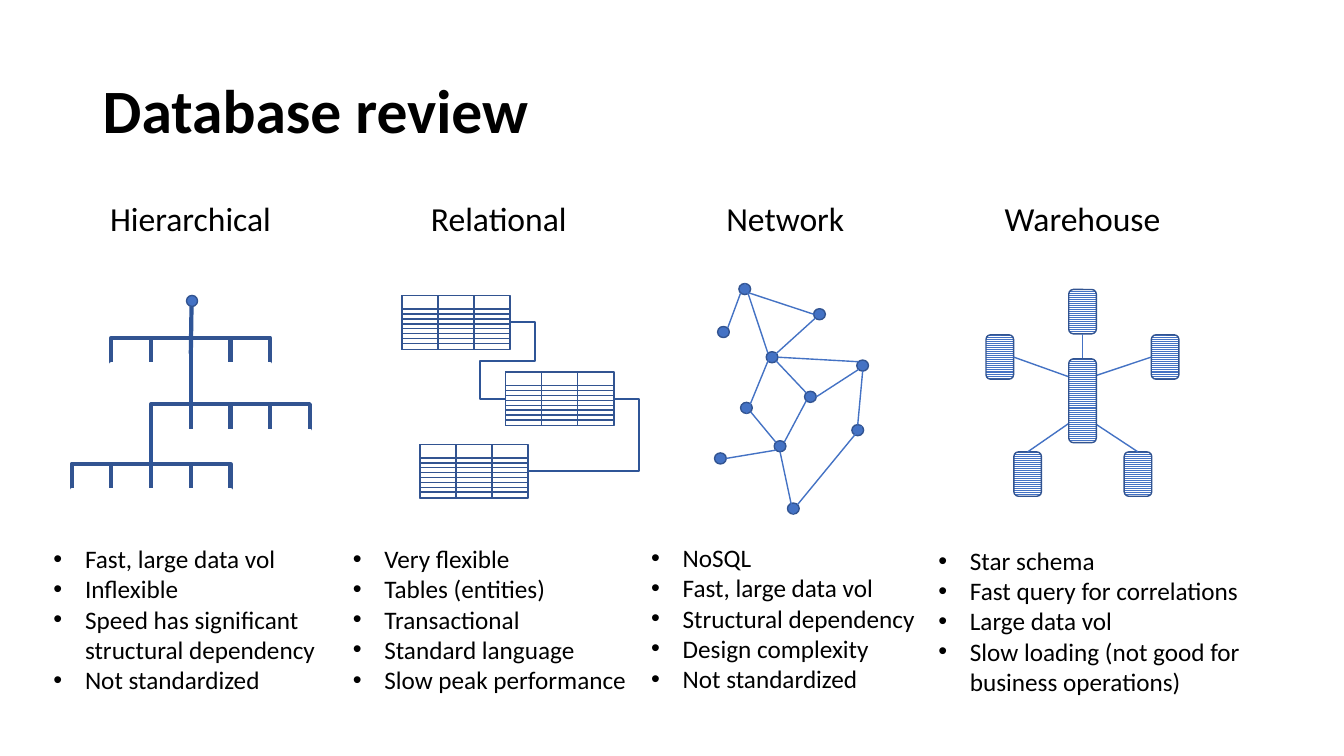
"""Build a slide that reviews four kinds of database."""
from dataclasses import dataclass

from lxml.etree import SubElement
from pptx import Presentation
from pptx.dml.color import RGBColor
from pptx.enum.dml import MSO_PATTERN
from pptx.enum.shapes import MSO_CONNECTOR, MSO_SHAPE
from pptx.enum.text import MSO_ANCHOR, MSO_AUTO_SIZE, PP_ALIGN
from pptx.oxml.ns import qn
from pptx.util import Pt


@dataclass(frozen=True)
class Theme:
    font: str = "Calibri"
    text: RGBColor = RGBColor(0, 0, 0)
    white: RGBColor = RGBColor(255, 255, 255)
    accent: RGBColor = RGBColor(0x44, 0x72, 0xC4)
    outline: RGBColor = RGBColor(0x32, 0x54, 0x91)
    branch: RGBColor = RGBColor(0x2F, 0x55, 0x97)
    title_size: int = 44
    heading_size: int = 24
    list_size: int = 18


THEME = Theme()
TOP, LEFT, BOTTOM, RIGHT = range(4)

deck = Presentation()
deck.slide_width, deck.slide_height = Pt(960), Pt(540)
page = deck.slides.add_slide(deck.slide_layouts[4])


def draw_shape(kind, left, top, width, height, fill=None, line=THEME.outline, weight=1):
    shape = page.shapes.add_shape(kind, Pt(left), Pt(top), Pt(width), Pt(height))
    shape.shadow.inherit = False
    if fill is None:
        shape.fill.background()
    else:
        shape.fill.solid()
        shape.fill.fore_color.rgb = fill
    shape.line.color.rgb = line
    shape.line.width = Pt(weight)
    return shape


def draw_line(start, end, color=THEME.accent, weight=1, kind=MSO_CONNECTOR.STRAIGHT):
    link = page.shapes.add_connector(kind, *(Pt(value) for value in (*start, *end)))
    link.line.color.rgb = color
    link.line.width = Pt(weight)
    SubElement(link._element.spPr, qn("a:effectLst"))
    return link


title = page.shapes.title
title.left, title.top, title.width, title.height = Pt(66.2), Pt(28.8), Pt(828), Pt(104.4)
title.text_frame.text = "Database review"
title.text_frame.vertical_anchor = MSO_ANCHOR.MIDDLE
para = title.text_frame.paragraphs[0]
para.alignment = PP_ALIGN.LEFT
para.line_spacing = 0.9
font = para.runs[0].font
font.name, font.size, font.bold = THEME.font, Pt(THEME.title_size), True
font.color.rgb = THEME.text

columns = [
    ("Hierarchical", 70.6, 131, 31, 384.5, 206.6,
     ["Fast, large data vol", "Inflexible",
      "Speed has significant structural dependency", "Not standardized"]),
    ("Relational", 300.2, 112.3, 244.8, 384.5, 211,
     ["Very flexible", "Tables (entities)", "Transactional",
      "Standard language", "Slow peak performance"]),
    ("Network", 511.2, 99.4, 457.9, 383.8, 205.2,
     ["NoSQL", "Fast, large data vol", "Structural dependency",
      "Design complexity", "Not standardized"]),
    ("Warehouse", 709.9, 126.7, 663.1, 385.9, 232.6,
     ["Star schema", "Fast query for correlations", "Large data vol",
      "Slow loading (not good for business operations)"]),
]
for number, (name, name_left, name_width, left, top, width, points) in enumerate(columns, 1):
    heading = page.shapes.add_textbox(Pt(name_left), Pt(138.2), Pt(name_width), Pt(36))
    heading.text_frame.word_wrap = False
    heading.text_frame.text = name
    para = heading.text_frame.paragraphs[0]
    para.alignment = PP_ALIGN.CENTER
    font = para.runs[0].font
    font.name, font.size = THEME.font, Pt(THEME.heading_size)
    font.color.rgb = THEME.text

    body = page.placeholders[number]
    body.left, body.top, body.width, body.height = Pt(left), Pt(top), Pt(width), Pt(116.6)
    frame = body.text_frame
    frame.text = "\n".join(points)
    frame.auto_size = MSO_AUTO_SIZE.NONE
    frame.vertical_anchor = MSO_ANCHOR.TOP
    for para in frame.paragraphs:
        para.space_before = Pt(0)
        properties = para._p.get_or_add_pPr()
        properties.set("marL", str(Pt(22.5)))
        properties.set("indent", str(Pt(-22.5)))
        SubElement(properties, qn("a:buFont")).set("typeface", "Arial")
        SubElement(properties, qn("a:buChar")).set("char", "•")
        font = para.runs[0].font
        font.name, font.size, font.bold = THEME.font, Pt(THEME.list_size), False
        font.color.rgb = THEME.text

draw_shape(MSO_SHAPE.OVAL, 133.2, 211, 7.9, 7.9, THEME.accent)
cell_width = 28.35
tiers = []
for first_column, top in [(1, 241.2), (2, 288.7), (0, 331.2)]:
    left = 51.25 + first_column * cell_width
    tiers.append([
        draw_shape(MSO_SHAPE.RECTANGLE, left + index * cell_width, top, cell_width, 23, weight=3)
        for index in range(4)
    ])
    draw_shape(MSO_SHAPE.RECTANGLE, left, top + 18.9, 4 * cell_width, 10,
               THEME.white, THEME.white, 3)
for parent, child in [(tiers[0][2], tiers[1][1]), (tiers[1][0], tiers[2][2])]:
    branch = draw_line((0, 0), (0, 0), THEME.branch, 3)
    branch.begin_connect(parent, LEFT)
    branch.end_connect(child, LEFT)
stem = draw_line((136.8, 218.9), (136.3, 252.7), THEME.branch, 3)
stem.end_connect(tiers[0][2], LEFT)

table_width, table_height = 77.3, 38.5
table_column, table_row = table_width / 3, 3.5
corners = [(287.1, 211), (361.2, 265.7), (300, 317.3)]
tables = []
for left, top in corners:
    tables.append(draw_shape(MSO_SHAPE.RECTANGLE, left, top, table_width, table_height,
                             THEME.white))
    for row in range(7):
        draw_shape(MSO_SHAPE.RECTANGLE, left, top + 9.8 + row * table_row, table_width,
                   table_row, THEME.white)
    for column in range(2):
        draw_shape(MSO_SHAPE.RECTANGLE, left + column * table_column, top, table_column,
                   table_height)

reach = 18
for source, target, side, bends in [(0, 1, LEFT, 5), (1, 2, RIGHT, 3)]:
    relation = draw_line((0, 0), (0, 0), THEME.branch, 1.5, MSO_CONNECTOR.ELBOW)
    relation.begin_connect(tables[source], RIGHT)
    relation.end_connect(tables[target], side)
    ratio = Pt(reach) / relation.width
    geometry = relation._element.spPr.find(qn("a:prstGeom"))
    geometry.set("prst", f"bentConnector{bends}")
    guides = geometry.find(qn("a:avLst"))
    if guides is None:
        guides = SubElement(geometry, qn("a:avLst"))
    for index, value in enumerate([-ratio, 0.5, 1 + ratio][:bends - 2], 1):
        guide = SubElement(guides, qn("a:gd"))
        guide.set("name", f"adj{index}")
        guide.set("fmla", f"val {round(value * 100000)}")

node_width, node_height = 8.4, 7.9
nodes = [(527.8, 202.5), (581.2, 220.5), (612, 257.2), (512.6, 233.2), (547.3, 251.2),
         (529, 287.4), (510.4, 323.5), (574.7, 279.5), (553, 314.8), (608.5, 303.3),
         (562.5, 359.3)]
for left, top in nodes:
    draw_shape(MSO_SHAPE.OVAL, left, top, node_width, node_height, THEME.accent)
rim = {"n": (0.5, 0), "nw": (0.15, 0.15), "w": (0, 0.5), "sw": (0.15, 0.85),
       "s": (0.5, 1), "se": (0.85, 0.85), "e": (1, 0.5), "ne": (0.85, 0.15)}
network_links = [
    (0, "sw", 3, "ne"), (0, "se", 1, "w"), (4, "e", 2, "nw"), (0, "n", 4, "nw"),
    (9, "n", 2, "s"), (7, "e", 2, "sw"), (8, "ne", 7, "sw"), (5, "se", 8, "nw"),
    (6, "e", 8, "sw"), (10, "ne", 9, "ne"), (4, "sw", 1, "sw"), (4, "se", 7, "nw"),
    (4, "sw", 5, "s"), (10, "s", 8, "s"),
]
for source, source_side, target, target_side in network_links:
    draw_line(*[
        (nodes[node][0] + rim[side][0] * node_width, nodes[node][1] + rim[side][1] * node_height)
        for node, side in [(source, source_side), (target, target_side)]
    ])

store_width, store_height = 19.7, 31.7
satellites = [
    (763.4, 206.8, BOTTOM, (773.2, 256.4)), (704.3, 239.2, RIGHT, (763.9, 269.3)),
    (822.4, 239.2, LEFT, (779.8, 269.3)), (724.2, 322.8, TOP, (769.7, 298.1)),
    (803, 322.8, TOP, (779.8, 301)),
]
stores, spokes = [], []
for left, top, side, hub_point in satellites:
    store = draw_shape(MSO_SHAPE.ROUNDED_RECTANGLE, left, top, store_width, store_height)
    spoke = draw_line((left, top), hub_point)
    spoke.begin_connect(store, side)
    stores.append(store)
    spokes.append(spoke)
hub = draw_shape(MSO_SHAPE.ROUNDED_RECTANGLE, 763.4, 256.4, store_width, 59.8)
spokes[0].end_connect(hub, TOP)
for store in [*stores, hub]:
    store.fill.patterned()
    store.fill.pattern = MSO_PATTERN.LIGHT_HORIZONTAL
    store.fill.fore_color.rgb = THEME.accent
    store.fill.back_color.rgb = THEME.white

deck.save("out.pptx")
